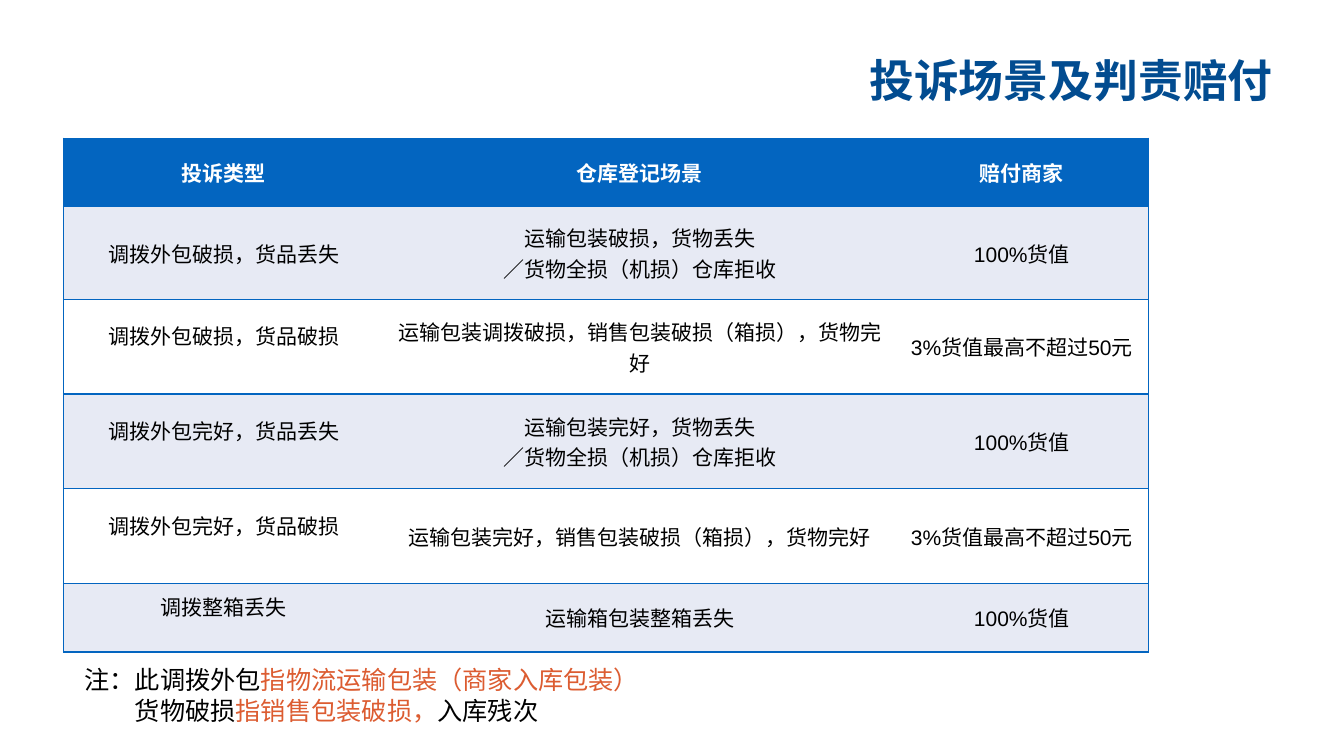
from lxml.etree import SubElement
from pptx import Presentation
from pptx.dml.color import RGBColor
from pptx.enum.text import MSO_ANCHOR, PP_ALIGN
from pptx.oxml.ns import qn
from pptx.util import Inches, Pt

NAVY = RGBColor(0x02, 0x4C, 0x90)
BLUE = RGBColor(0x03, 0x65, 0xC0)
PALE = RGBColor(0xE7, 0xEA, 0xF4)
ORANGE = RGBColor(0xDC, 0x5C, 0x31)
WHITE = RGBColor(0xFF, 0xFF, 0xFF)
BLACK = RGBColor(0x00, 0x00, 0x00)

COLUMN_WIDTHS = [3.18, 5.07, 2.51]
ROW_HEIGHTS = [0.68, 0.92, 0.94, 0.94, 0.94, 0.68]
FULL_VALUE = "100%货值"
CAPPED_VALUE = "3%货值最高不超过50元"
COMPLAINTS = [
    ("投诉类型", "仓库登记场景", "赔付商家"),
    ("调拨外包破损，货品丢失", "运输包装破损，货物丢失\n／货物全损（机损）仓库拒收", FULL_VALUE),
    ("调拨外包破损，货品破损", "运输包装调拨破损，销售包装破损（箱损），货物完好", CAPPED_VALUE),
    ("调拨外包完好，货品丢失", "运输包装完好，货物丢失\n／货物全损（机损）仓库拒收", FULL_VALUE),
    ("调拨外包完好，货品破损", "运输包装完好，销售包装破损（箱损），货物完好", CAPPED_VALUE),
    ("调拨整箱丢失", "运输箱包装整箱丢失", FULL_VALUE),
]
NOTE_LINES = [
    [("注：此调拨外包", BLACK), ("指物流运输包装（商家入库包装）", ORANGE)],
    [("货物破损", BLACK), ("指销售包装破损，", ORANGE), ("入库残次", BLACK)],
]


def style_font(font, name, size, color, bold=False):
    font.name = name
    font.size = Pt(size)
    font.bold = bold
    font.color.rgb = color


def add_text_frame(slide, left, top, width, height):
    box = slide.shapes.add_textbox(Inches(left), Inches(top), Inches(width), Inches(height))
    box.text_frame.word_wrap = True
    return box.text_frame


def add_title(slide):
    title = add_text_frame(slide, 8.35, 0.52, 4.55, 1.11)
    title.margin_left = title.margin_right = title.margin_top = title.margin_bottom = 0
    heading = title.paragraphs[0]
    heading.text = "投诉场景及判责赔付"
    heading.alignment = PP_ALIGN.CENTER
    style_font(heading.runs[0].font, "Montserrat", 32, NAVY, bold=True)


def set_borders(cell, visible_sides):
    """Draw the given sides (letters of LRTB) in blue and hide the others."""
    properties = cell._tc.get_or_add_tcPr()
    for side in "LRTB":
        line = SubElement(properties, qn(f"a:ln{side}"), w=str(Pt(1)))
        if side in visible_sides:
            fill = SubElement(line, qn("a:solidFill"))
            SubElement(fill, qn("a:srgbClr"), val=str(BLUE))
        else:
            SubElement(line, qn("a:noFill"))


def fill_cell(cell, text, row, column):
    set_borders(cell, "TB" + {0: "L", 2: "R"}.get(column, ""))
    header = row == 0
    cell.fill.solid()
    cell.fill.fore_color.rgb = BLUE if header else PALE if row % 2 else WHITE
    cell.vertical_anchor = MSO_ANCHOR.MIDDLE
    cell.margin_left = cell.margin_right = Inches(0.13)
    cell.margin_top = Inches(0.07)
    raised = column == 0 and row > 1
    cell.margin_bottom = Inches(0.29 if raised else 0.07)
    cell.text_frame.text = text
    for paragraph in cell.text_frame.paragraphs:
        paragraph.alignment = PP_ALIGN.CENTER
        style_font(paragraph.runs[0].font, "Arial", 15, WHITE if header else BLACK, header)


def add_complaint_table(slide):
    table = slide.shapes.add_table(
        len(ROW_HEIGHTS), len(COLUMN_WIDTHS), Inches(0.63), Inches(1.37),
        Inches(sum(COLUMN_WIDTHS)), Inches(sum(ROW_HEIGHTS)),
    ).table
    for column, width in zip(table.columns, COLUMN_WIDTHS):
        column.width = Inches(width)
    for row, height in zip(table.rows, ROW_HEIGHTS):
        row.height = Inches(height)
    for row, texts in enumerate(COMPLAINTS):
        for column, text in enumerate(texts):
            fill_cell(table.cell(row, column), text, row, column)


def add_note(slide):
    note = add_text_frame(slide, 0.74, 6.22, 9.29, 1.06)
    note.vertical_anchor = MSO_ANCHOR.BOTTOM
    note.margin_bottom = Inches(0.08)
    for index, parts in enumerate(NOTE_LINES):
        paragraph = note.add_paragraph() if index else note.paragraphs[0]
        paragraph.line_spacing = Pt(22)
        if index:
            paragraph._p.get_or_add_pPr().set("marL", str(Inches(0.5)))
        for text, color in parts:
            run = paragraph.add_run()
            run.text = text
            style_font(run.font, "Arial", 18, color)


def main():
    presentation = Presentation()
    presentation.slide_width = Inches(13.33)
    presentation.slide_height = Inches(7.5)
    slide = presentation.slides.add_slide(presentation.slide_layouts[6])
    add_title(slide)
    add_complaint_table(slide)
    add_note(slide)
    presentation.save("out.pptx")


if __name__ == "__main__":
    main()
